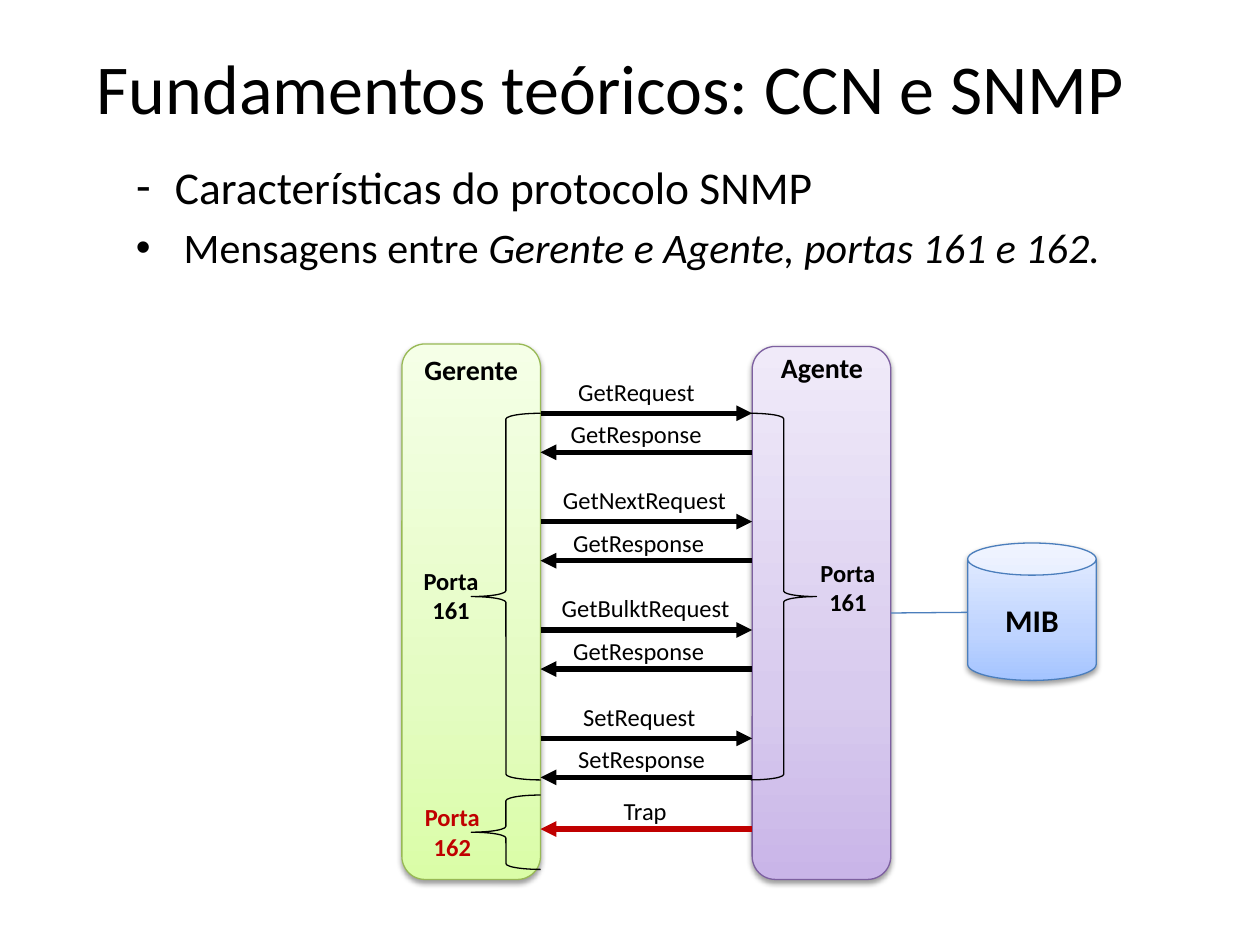
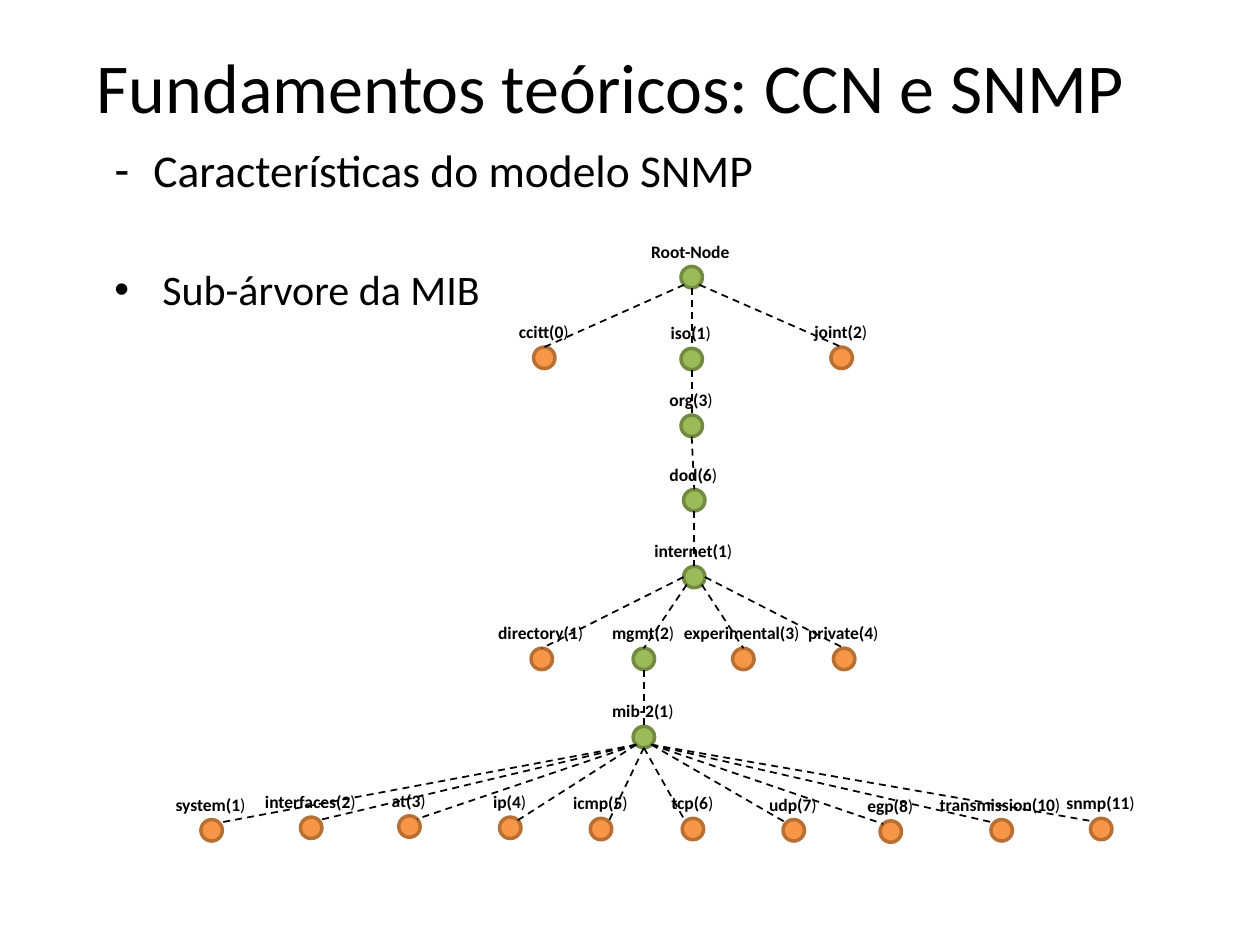
from lxml import etree
from pptx import Presentation
from pptx.dml.color import RGBColor
from pptx.enum import dml, shapes, text
from pptx.oxml import ns
from pptx.util import Inches, Pt

BLACK = RGBColor(0x00, 0x00, 0x00)
RED = RGBColor(0xC0, 0x00, 0x00)
BLUE_LINE = RGBColor(0x4B, 0x7E, 0xBC)
GREEN_LINE = RGBColor(0x98, 0xB9, 0x55)
PURPLE_LINE = RGBColor(0x7D, 0x60, 0xA0)
BRANCH_FILL, BRANCH_LINE = RGBColor(0x9B, 0xBB, 0x59), RGBColor(0x73, 0x8A, 0x42)
LEAF_FILL, LEAF_LINE = RGBColor(0xF7, 0x96, 0x46), RGBColor(0xB7, 0x6F, 0x34)
GREENS = ("DAFDA7", "E4FCC2", "F5FFE7")
PURPLES = ("C9B5E8", "D8CBEE", "F0EAF9")
BLUES = ("A4C4FF", "BFD4FF", "E6EEFF")
FONT = "Calibri"
TITLE = "Fundamentos teóricos: CCN e SNMP"

MANAGER_RIGHT, AGENT_LEFT = 4.29, 5.97
FIRST_REQUEST, EXCHANGE_PITCH, RESPONSE_GAP = 3.28, 0.86, 0.31
# Each message: label, label left, label width
EXCHANGES = [
    (("GetRequest", 4.49, 1.14), ("GetResponse", 4.43, 1.25)),
    (("GetNextRequest", 4.37, 1.57), ("GetResponse", 4.45, 1.25)),
    (("GetBulktRequest", 4.36, 1.55), ("GetResponse", 4.45, 1.25)),
    (("SetRequest", 4.53, 1.1), ("SetResponse", 4.49, 1.22)),
]

NODE_SIZE = 0.17
# Points on a node's rim, as multiples of its radius from the centre
TOP, BOTTOM, LEFT, RIGHT = (0, -1), (0, 1), (-1, 0), (1, 0)
TOP_LEFT, TOP_RIGHT = (-0.71, -0.71), (0.71, -0.71)
BOTTOM_LEFT, BOTTOM_RIGHT = (-0.71, 0.71), (0.71, 0.71)
# Each node: label, label width, centre x, centre y, parent,
# rim point on parent, rim point on node
NODES = [
    ("Root-Node", 0.84, 5.49, 2.2, None, None, None),
    ("ccitt(0)", 0.6, 4.32, 2.84, "Root-Node", BOTTOM_LEFT, TOP),
    ("iso(1)", 0.53, 5.49, 2.85, "Root-Node", BOTTOM, TOP),
    ("joint(2)", 0.63, 6.68, 2.84, "Root-Node", BOTTOM_RIGHT, TOP),
    ("org(3)", 0.55, 5.49, 3.38, "iso(1)", BOTTOM, TOP),
    ("dod(6)", 0.59, 5.51, 3.97, "org(3)", BOTTOM, TOP),
    ("internet(1)", 0.83, 5.51, 4.58, "dod(6)", BOTTOM, TOP),
    ("directory(1)", 0.89, 4.3, 5.23, "internet(1)", LEFT, TOP),
    ("mgmt(2)", 0.7, 5.11, 5.23, "internet(1)", BOTTOM_LEFT, TOP),
    ("experimental(3)", 1.14, 5.9, 5.23, "internet(1)", BOTTOM_RIGHT, TOP),
    ("private(4)", 0.77, 6.7, 5.23, "internet(1)", RIGHT, TOP),
    ("mib-2(1)", 0.7, 5.11, 5.85, "mgmt(2)", BOTTOM, TOP),
    ("system(1)", 0.77, 1.68, 6.59, "mib-2(1)", BOTTOM_LEFT, TOP_RIGHT),
    ("interfaces(2)", 0.93, 2.47, 6.57, "mib-2(1)", BOTTOM_LEFT, TOP_RIGHT),
    ("at(3)", 0.48, 3.25, 6.56, "mib-2(1)", BOTTOM_LEFT, TOP_RIGHT),
    ("ip(4)", 0.47, 4.05, 6.57, "mib-2(1)", BOTTOM_LEFT, TOP_RIGHT),
    ("icmp(5)", 0.64, 4.77, 6.58, "mib-2(1)", BOTTOM, TOP_RIGHT),
    ("tcp(6)", 0.54, 5.5, 6.58, "mib-2(1)", BOTTOM, TOP_LEFT),
    ("udp(7)", 0.59, 6.3, 6.59, "mib-2(1)", BOTTOM_RIGHT, TOP_LEFT),
    ("egp(8)", 0.57, 7.07, 6.6, "mib-2(1)", BOTTOM_RIGHT, TOP_LEFT),
    ("transmission(10)", 1.18, 7.95, 6.59, "mib-2(1)", BOTTOM_RIGHT, TOP_LEFT),
    ("snmp(11)", 0.75, 8.74, 6.58, "mib-2(1)", BOTTOM_RIGHT, TOP_LEFT),
]


def add_span(para, words, size, color=BLACK, bold=False, italic=False):
    span = para.add_run()
    span.text = words
    span.font.name = FONT
    span.font.size = Pt(size)
    span.font.bold = bold
    span.font.italic = italic
    span.font.color.rgb = color


def add_box(page, left, top, width, height):
    box = page.shapes.add_textbox(*map(Inches, (left, top, width, height)))
    box.text_frame.word_wrap = True
    return box


def add_label(page, lines, left, top, width, height, size,
              color=BLACK, bold=False):
    """Add an unwrapped text box; several lines are centred on each other."""
    box = add_box(page, left, top, width, height)
    frame = box.text_frame
    frame.word_wrap = False
    frame.auto_size = text.MSO_AUTO_SIZE.SHAPE_TO_FIT_TEXT
    for index, line in enumerate(lines):
        para = frame.add_paragraph() if index else frame.paragraphs[0]
        if len(lines) > 1:
            para.alignment = text.PP_ALIGN.CENTER
        add_span(para, line, size, color, bold)
    return box


def add_title(page, top):
    box = add_box(page, 0.67, top, 8.83, 1.25)
    box.text_frame.vertical_anchor = text.MSO_ANCHOR.MIDDLE
    add_span(box.text_frame.paragraphs[0], TITLE, 40)


def set_bullet(para, mark, indent):
    props = para._p.get_or_add_pPr()
    props.set("marL", str(Inches(indent)))
    props.set("indent", str(-Inches(indent)))
    etree.SubElement(props, ns.qn("a:buFont"), typeface="Arial")
    etree.SubElement(props, ns.qn("a:buChar"), char=mark)


def add_body(page, left, top, height, heading, point, gap):
    """Add a dashed heading and a bulleted point, given as (words, italic) runs."""
    frame = add_box(page, left, top, 8.83, height).text_frame
    first, second = frame.paragraphs[0], frame.add_paragraph()
    set_bullet(first, "-", 0.31)
    add_span(first, heading, 26)
    set_bullet(second, "•", 0.38)
    second.space_before = Pt(gap)
    for words, italic in point:
        add_span(second, words, 24, italic=italic)


def add_solid(page, preset, left, top, width, height, colors, line_color):
    """Add a shape with a gradient from bottom to top and a soft shadow."""
    solid = page.shapes.add_shape(preset, *map(Inches, (left, top, width, height)))
    solid.fill.gradient()
    solid.fill.gradient_angle = 90
    stops = next(solid._element.iter(ns.qn("a:gsLst")))
    for stop in list(stops):
        stops.remove(stop)
    for position, color in zip((0, 35000, 100000), colors):
        stop = etree.SubElement(stops, ns.qn("a:gs"), pos=str(position))
        etree.SubElement(stop, ns.qn("a:srgbClr"), val=color)
    solid.line.color.rgb = line_color
    solid.line.width = Pt(0.75)
    solid.shadow.inherit = False
    effects = solid._element.spPr.find(ns.qn("a:effectLst"))
    shadow = etree.SubElement(effects, ns.qn("a:outerShdw"), blurRad="40000",
                              dist="20000", dir="5400000", rotWithShape="0")
    shade = etree.SubElement(shadow, ns.qn("a:srgbClr"), val="000000")
    etree.SubElement(shade, ns.qn("a:alpha"), val="38000")
    return solid


def add_brace(page, preset, left, top, width, height):
    brace = page.shapes.add_shape(preset, *map(Inches, (left, top, width, height)))
    brace.fill.background()
    brace.line.color.rgb = BLACK
    brace.line.width = Pt(0.75)
    brace.shadow.inherit = False


def add_line(page, start, end, color, width):
    line = page.shapes.add_connector(
        shapes.MSO_CONNECTOR.STRAIGHT, *map(Inches, (*start, *end)))
    line.line.color.rgb = color
    line.line.width = Pt(width)
    etree.SubElement(line._element.spPr, ns.qn("a:effectLst"))
    return line


def add_arrow(page, from_x, to_x, y, color=BLACK):
    arrow = add_line(page, (from_x, y), (to_x, y), color, 3)
    etree.SubElement(arrow.line._get_or_add_ln(), ns.qn("a:tailEnd"), type="triangle")


def add_exchange(page, y, request, response):
    add_arrow(page, MANAGER_RIGHT, AGENT_LEFT, y)
    add_arrow(page, AGENT_LEFT, MANAGER_RIGHT, y + RESPONSE_GAP)
    for (name, left, width), top in ((request, y - 0.34), (response, y)):
        add_label(page, [name], left, top, width, 0.34, 14)


def add_node(page, name, label_width, x, y, is_branch):
    corner = (x - NODE_SIZE / 2, y - NODE_SIZE / 2)
    node = page.shapes.add_shape(
        shapes.MSO_SHAPE.OVAL, *map(Inches, (*corner, NODE_SIZE, NODE_SIZE)))
    node.fill.solid()
    node.fill.fore_color.rgb = BRANCH_FILL if is_branch else LEAF_FILL
    node.line.color.rgb = BRANCH_LINE if is_branch else LEAF_LINE
    node.line.width = Pt(2)
    node.shadow.inherit = False
    stem = name.removesuffix(")")
    label = add_label(page, [stem], x - label_width / 2, y - 0.34,
                      label_width, 0.27, 10, bold=True)
    if stem != name:
        add_span(label.text_frame.paragraphs[0], ")", 10)


def rim_point(centre, direction):
    return tuple(c + d * NODE_SIZE / 2 for c, d in zip(centre, direction))


def build_messages(page):
    add_title(page, 0.06)
    rounded = shapes.MSO_SHAPE.ROUNDED_RECTANGLE
    add_solid(page, rounded, 3.19, 2.73, 1.1, 4.25, GREENS, GREEN_LINE)
    agent = add_solid(page, rounded, AGENT_LEFT, 2.75, 1.1, 4.23, PURPLES, PURPLE_LINE)
    store = add_solid(page, shapes.MSO_SHAPE.CAN, 7.68, 4.31, 1.02, 1.09,
                      BLUES, BLUE_LINE)
    store.text_frame.vertical_anchor = text.MSO_ANCHOR.MIDDLE
    para = store.text_frame.paragraphs[0]
    para.alignment = text.PP_ALIGN.CENTER
    add_span(para, "MIB", 18, bold=True)
    link = add_line(page, (7.68, 4.86), (7.07, 4.86), BLUE_LINE, 0.75)
    link.end_connect(agent, 3)

    add_label(page, ["Gerente"], 3.27, 2.75, 0.94, 0.37, 16, bold=True)
    add_label(page, ["Agente"], 6.1, 2.73, 0.86, 0.37, 16, bold=True)
    for index, (request, response) in enumerate(EXCHANGES):
        add_exchange(page, FIRST_REQUEST + index * EXCHANGE_PITCH, request, response)
    add_arrow(page, AGENT_LEFT, MANAGER_RIGHT, 6.58, RED)
    add_label(page, ["Trap"], 4.85, 6.27, 0.55, 0.34, 14)

    add_brace(page, shapes.MSO_SHAPE.LEFT_BRACE, 3.74, 3.28, 0.55, 2.91)
    add_brace(page, shapes.MSO_SHAPE.LEFT_BRACE, 3.74, 6.31, 0.55, 0.59)
    add_brace(page, shapes.MSO_SHAPE.RIGHT_BRACE, 5.96, 3.28, 0.52, 2.91)
    for port, left, top, color in (("161", 3.26, 4.44, BLACK),
                                   ("162", 3.27, 6.32, RED),
                                   ("161", 6.41, 4.38, BLACK)):
        add_label(page, ["Porta", port], left, top, 0.64, 0.57, 14, color, True)
    add_body(page, 0.98, 1.21, 1.12, "Características do protocolo SNMP",
             [("Mensagens entre ", False),
              ("Gerente e Agente, portas 161 e 162.", True)], 5)


def build_tree(page):
    add_title(page, 0.05)
    parents = {node[4] for node in NODES}
    centres = {name: (x, y) for name, _, x, y, *_ in NODES}
    for name, label_width, x, y, *_ in NODES:
        add_node(page, name, label_width, x, y, name in parents)
    for name, _, _, _, parent, parent_rim, node_rim in NODES:
        if parent:
            edge = add_line(page, rim_point(centres[parent], parent_rim),
                            rim_point(centres[name], node_rim), BLACK, 1)
            edge.line.dash_style = dml.MSO_LINE.DASH
    add_body(page, 0.81, 1.08, 2.48, "Características do modelo SNMP",
             [("Sub-árvore da MIB", False)], 38)


def main():
    deck = Presentation()
    deck.slide_width, deck.slide_height = Inches(10), Inches(7.5)
    for build in (build_messages, build_tree):
        build(deck.slides.add_slide(deck.slide_layouts[6]))
    deck.save("out.pptx")


if __name__ == "__main__":
    main()
